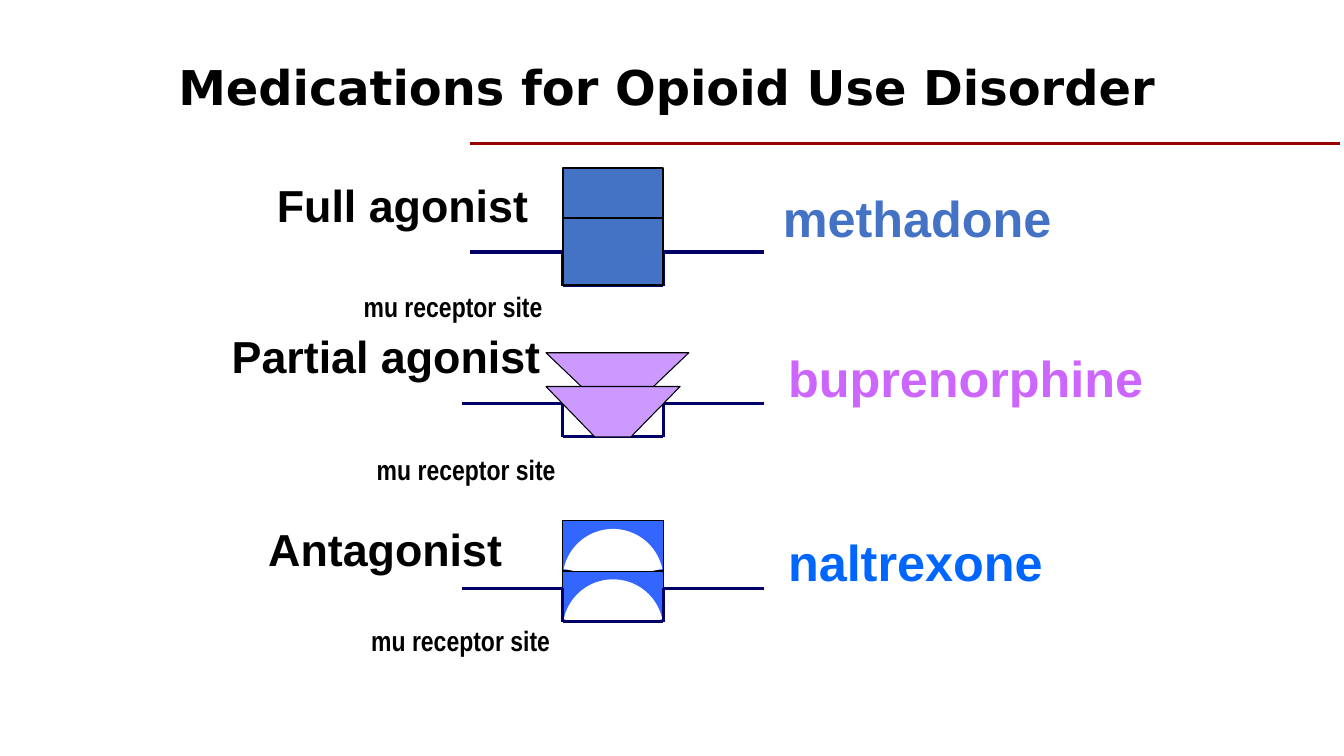
import math
from dataclasses import dataclass

from lxml import etree
from pptx import Presentation
from pptx.dml.color import RGBColor
from pptx.enum.shapes import MSO_CONNECTOR, MSO_SHAPE
from pptx.enum.text import MSO_ANCHOR, MSO_AUTO_SIZE, PP_ALIGN
from pptx.oxml.ns import qn
from pptx.util import Cm, Pt

RECTANGLE = MSO_SHAPE.RECTANGLE
STRAIGHT = MSO_CONNECTOR.STRAIGHT
LEFT, CENTER, RIGHT = PP_ALIGN.LEFT, PP_ALIGN.CENTER, PP_ALIGN.RIGHT
MIDDLE = MSO_ANCHOR.MIDDLE
NO_AUTOFIT = MSO_AUTO_SIZE.NONE

COLORS = {
    "black": "000000",
    "white": "FFFFFF",
    "rule": "980000",
    "receptor": "000066",
    "full": "4472C4",
    "partial": "CC99FF",
    "partial_text": "CC66FF",
    "antagonist": "3366FF",
    "antagonist_text": "0066FF",
}

POCKET_LEFT = 14.18
POCKET_WIDTH = 2.54
POCKET_RIGHT = POCKET_LEFT + POCKET_WIDTH
POCKET_DEPTH = 0.85
MEMBRANE_RIGHT = 19.26
DOME_RADIUS = POCKET_WIDTH / 2
DOME_DROP = 1.48


@dataclass
class Style:
    size: float
    height: float
    font: str = "Arial"
    align: PP_ALIGN = LEFT


@dataclass
class Label:
    text: str
    left: float
    top: float
    width: float
    style: Style
    color: str = "black"


@dataclass
class Receptor:
    membrane_left: float
    surface: float


@dataclass
class Trapezoid:
    top: float
    bottom: float
    top_right: float
    bottom_left: float
    bottom_right: float


ROLE = Style(32, 1.6, align=RIGHT)
ROLE_CENTERED = Style(32, 1.6, align=CENTER)
DRUG = Style(36, 1.78)
SITE = Style(20, 1.09, "Arial Narrow", CENTER)

LABELS = [
    Label("Full agonist", 6.15, 4.45, 7.42, ROLE),
    Label("methadone", 19.48, 4.7, 10.16, DRUG, "full"),
    Label("mu receptor site", 8.46, 7.24, 5.92, SITE),
    Label("Partial agonist", 5.19, 8.26, 9.09, ROLE_CENTERED),
    Label("buprenorphine", 19.61, 8.74, 10.16, DRUG, "partial_text"),
    Label("mu receptor site", 8.89, 11.35, 5.72, SITE),
    Label("Antagonist", 5.72, 13.13, 7.19, ROLE),
    Label("naltrexone", 19.61, 13.36, 10.16, DRUG, "antagonist_text"),
    Label("mu receptor site", 8.89, 15.65, 5.44, SITE),
]


def rgb(color: str) -> RGBColor:
    return RGBColor.from_string(COLORS[color])


def paint(sp, fill: str, line_width: float) -> None:
    sp.shadow.inherit = False
    sp.fill.solid()
    sp.fill.fore_color.rgb = rgb(fill)
    if line_width:
        sp.line.color.rgb = rgb("black")
        sp.line.width = Pt(line_width)
    else:
        sp.line.fill.background()


def write(tf, text: str, size: float, font: str, color: str,
          align: PP_ALIGN, spacing: float) -> None:
    tf.word_wrap = True
    p = tf.paragraphs[0]
    p.text = text
    p.alignment = align
    p.line_spacing = spacing
    p.space_before = Pt(0)
    p.font.size = Pt(size)
    p.font.name = font
    p.font.bold = True
    p.font.color.rgb = rgb(color)


def add_label(shapes, label: Label) -> None:
    style = label.style
    box = shapes.add_textbox(Cm(label.left), Cm(label.top), Cm(label.width), Cm(style.height))
    write(box.text_frame, label.text, style.size, style.font, label.color, style.align, 0.95)


def add_line(shapes, x1: float, y1: float, x2: float, y2: float, color: str) -> None:
    line = shapes.add_connector(STRAIGHT, Cm(x1), Cm(y1), Cm(x2), Cm(y2))
    line.line.color.rgb = rgb(color)
    line.line.width = Pt(2.25)
    etree.SubElement(line._element.spPr, qn("a:effectLst"))


def add_receptor(shapes, receptor: Receptor) -> None:
    surface = receptor.surface
    floor = surface + POCKET_DEPTH
    corners = [
        (receptor.membrane_left, surface),
        (POCKET_LEFT, surface),
        (POCKET_LEFT, floor),
        (POCKET_RIGHT, floor),
        (POCKET_RIGHT, surface),
        (MEMBRANE_RIGHT, surface),
    ]
    group = shapes.add_group_shape()
    for start, end in zip(corners, corners[1:]):
        add_line(group.shapes, *start, *end, "receptor")


def add_block(shapes, top: float, height: float, fill: str, line_width: float) -> None:
    sp = shapes.add_shape(RECTANGLE, Cm(POCKET_LEFT), Cm(top), Cm(POCKET_WIDTH), Cm(height))
    paint(sp, fill, line_width)


def add_outline(shapes, points: list[tuple[float, float]], fill: str, line_width: float) -> None:
    vertices = [(Cm(x), Cm(y)) for x, y in points]
    builder = shapes.build_freeform(*vertices[0])
    builder.add_line_segments(vertices[1:], close=True)
    paint(builder.convert_to_shape(), fill, line_width)


def add_trapezoid(shapes, trap: Trapezoid) -> None:
    points = [(13.76, trap.top), (trap.bottom_left, trap.bottom),
              (trap.bottom_right, trap.bottom), (trap.top_right, trap.top)]
    add_outline(shapes, points, "partial", 0.75)


def add_domed_block(shapes, top: float) -> None:
    add_block(shapes, top, 1.27, "antagonist", 0.75)
    x, y = POCKET_LEFT + DOME_RADIUS, top + DOME_DROP
    angles = [math.radians(degrees) for degrees in range(12, 169, 3)]
    arc = [(x - DOME_RADIUS * math.cos(a), y - DOME_RADIUS * math.sin(a)) for a in angles]
    add_outline(shapes, arc + [(x, y)], "white", 0)


def main() -> None:
    prs = Presentation()
    prs.slide_width, prs.slide_height = Cm(33.87), Cm(19.05)
    s = prs.slides.add_slide(prs.slide_layouts[5])
    shapes = s.shapes

    title = shapes.title
    title.left, title.top, title.width, title.height = Cm(4.24), Cm(0.84), Cm(25.35), Cm(2.84)
    tf = title.text_frame
    tf.auto_size = NO_AUTOFIT
    tf.vertical_anchor = MIDDLE
    write(tf, "Medications for Opioid Use Disorder", 34.2, "DejaVu Sans", "black", LEFT, 0.9)
    add_line(shapes, 11.85, 3.62, 33.76, 3.62, "rule")

    for label in LABELS:
        add_label(shapes, label)

    add_block(shapes, 4.23, 1.69, "full", 1.5)
    add_receptor(shapes, Receptor(11.85, 6.35))
    add_block(shapes, 5.5, 1.69, "full", 1.5)

    add_trapezoid(shapes, Trapezoid(8.89, 10.13, 17.36, 15.06, 16.06))
    add_receptor(shapes, Receptor(11.64, 10.16))
    add_trapezoid(shapes, Trapezoid(9.74, 11.01, 17.14, 14.99, 15.9))

    for top in (13.12, 14.39):
        add_domed_block(shapes, top)
    add_receptor(shapes, Receptor(11.64, 14.82))

    prs.save("out.pptx")


if __name__ == "__main__":
    main()
